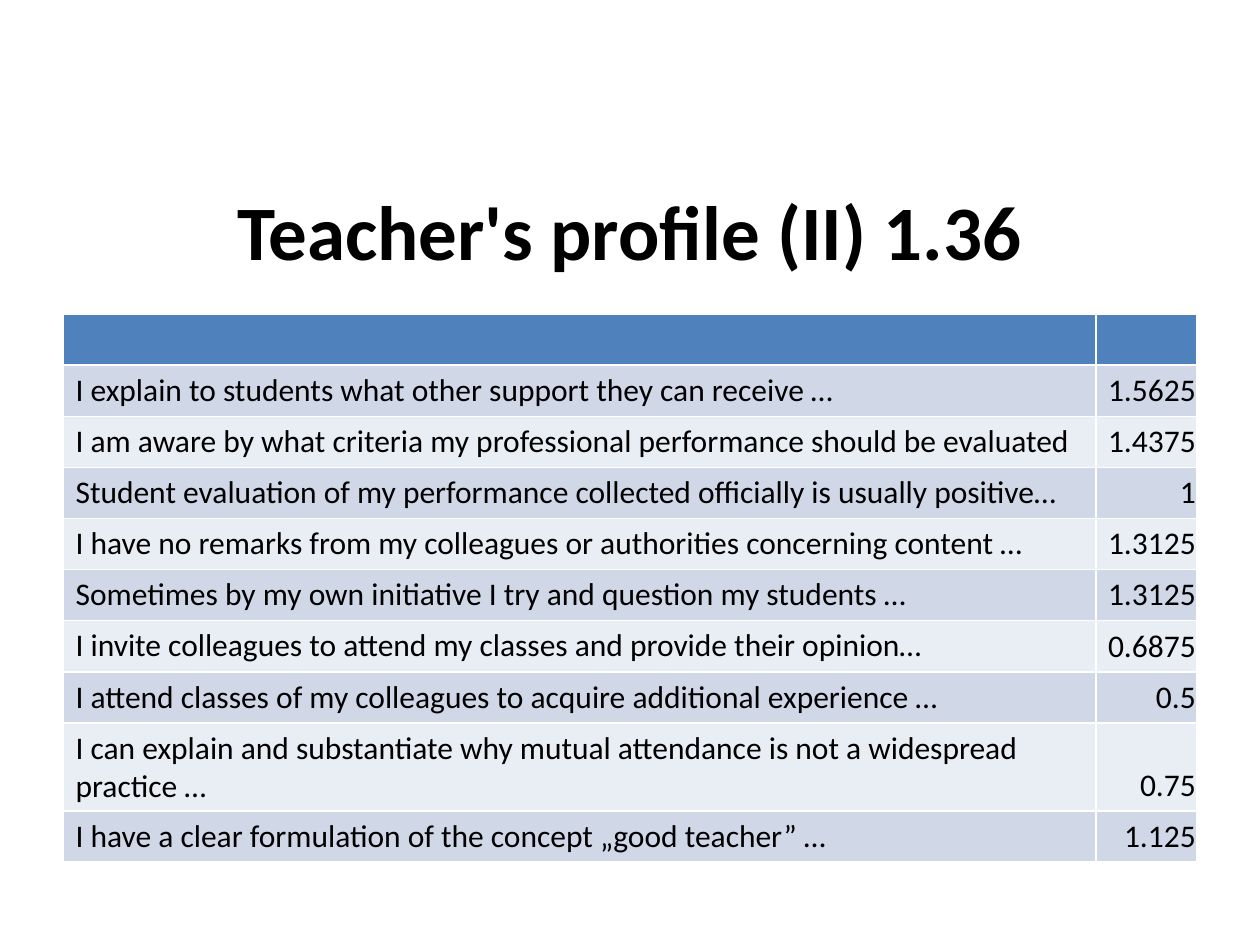
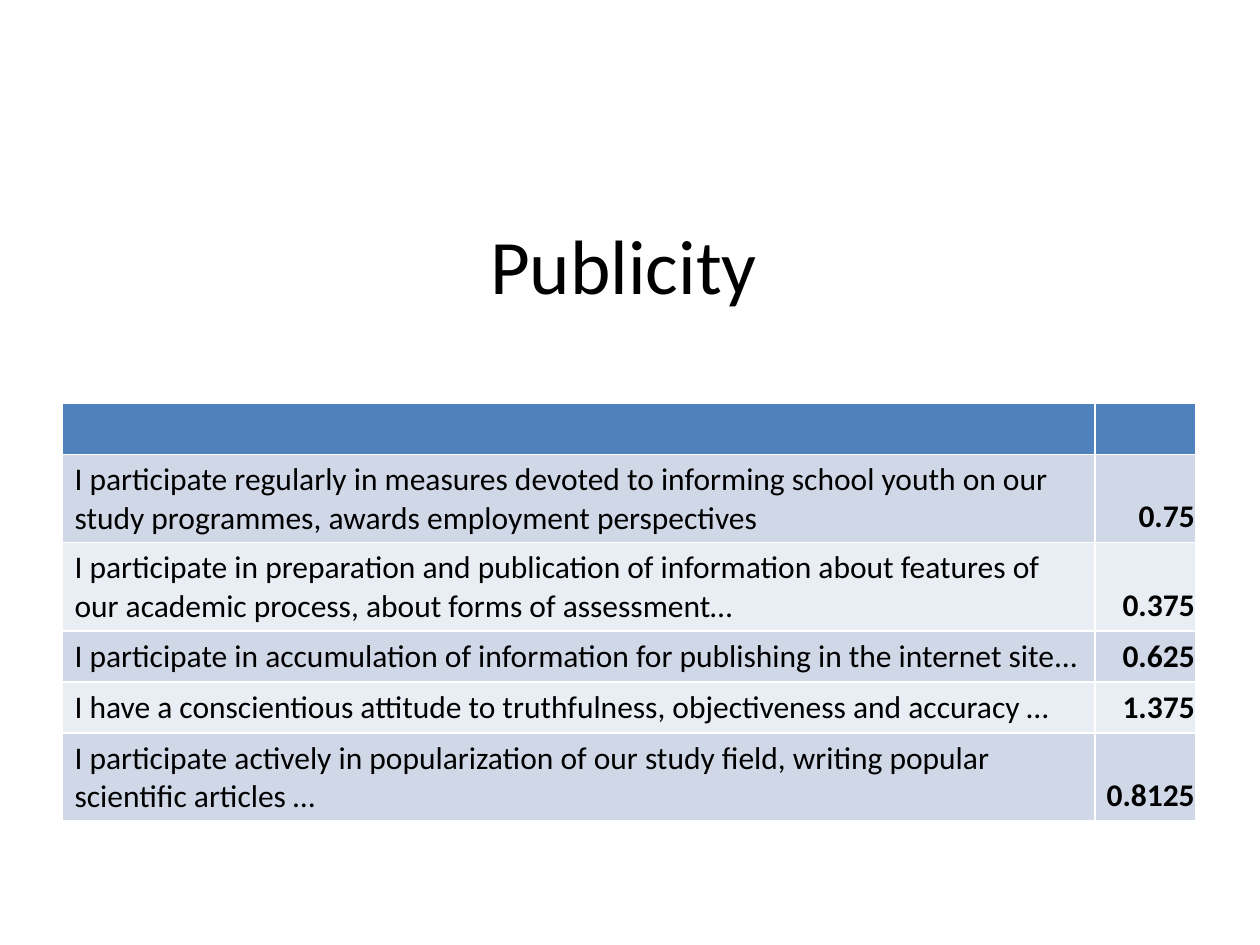
from dataclasses import dataclass

from lxml import etree
from pptx import Presentation
from pptx import util as u
from pptx.dml import color
from pptx.enum import text
from pptx.oxml import ns


@dataclass(frozen=True)
class Theme:
    font: str = "Calibri"
    ink: str = "000000"
    header: str = "4F81BD"
    bands: tuple = ("D0D8E8", "E9EDF4")
    rule: str = "FFFFFF"
    rule_width: float = 1
    title_size: float = 44
    cell_size: float = 18


THEME = Theme()
COLUMN_WIDTHS = (590.4, 57.6)
ROW_HEIGHT = 29.2

PROFILE_SCORES = [
    ("I explain to students what other support they can receive …", "1.5625"),
    ("I am aware by what criteria my professional performance should be evaluated", "1.4375"),
    ("Student evaluation of my performance collected officially is usually positive…", "1"),
    ("I have no remarks from my colleagues or authorities concerning content …", "1.3125"),
    ("Sometimes by my own initiative I try and question my students …", "1.3125"),
    ("I invite colleagues to attend my classes and provide their opinion…", "0.6875"),
    ("I attend classes of my colleagues to acquire additional experience …", "0.5"),
    ("I can explain and substantiate why mutual attendance is not a widespread practice …", "0.75"),
    ("I have a clear formulation of the concept „good teacher” …", "1.125"),
]

PUBLICITY_SCORES = [
    ("I participate regularly in measures devoted to informing school youth on our "
     "study programmes, awards employment perspectives", "0.75"),
    ("I participate in preparation and publication of information about features of "
     "our academic process, about forms of assessment…", "0.375"),
    ("I participate in accumulation of information for publishing in the internet site...", "0.625"),
    ("I have a conscientious attitude to truthfulness, objectiveness and accuracy …", "1.375"),
    ("I participate actively in popularization of our study field, writing popular "
     "scientific articles …", "0.8125"),
]


def format_text(frame, size, align, bold=False):
    para = frame.paragraphs[0]
    para.alignment = align
    for span in para.runs:
        span.font.name = THEME.font
        span.font.size = u.Pt(size)
        span.font.bold = bold
        span.font.color.rgb = color.RGBColor.from_string(THEME.ink)


def add_title(page, title, left, top, width, height, bold):
    box = page.shapes.add_textbox(u.Pt(left), u.Pt(top), u.Pt(width), u.Pt(height))
    frame = box.text_frame
    frame.word_wrap = True
    frame.vertical_anchor = text.MSO_ANCHOR.MIDDLE
    frame.text = title
    format_text(frame, THEME.title_size, text.PP_ALIGN.CENTER, bold)


def paint_cell(cell, fill):
    properties = cell._tc.get_or_add_tcPr()
    for side in ("lnL", "lnR", "lnT", "lnB"):
        line = etree.SubElement(properties, ns.qn(f"a:{side}"), w=str(u.Pt(THEME.rule_width)))
        solid = etree.SubElement(line, ns.qn("a:solidFill"))
        etree.SubElement(solid, ns.qn("a:srgbClr"), val=THEME.rule)
    cell.fill.solid()
    cell.fill.fore_color.rgb = color.RGBColor.from_string(fill)


def write_statement(cell, statement):
    cell.text_frame.text = statement
    format_text(cell.text_frame, THEME.cell_size, text.PP_ALIGN.LEFT)


def write_score(cell, score, bold):
    cell.text_frame.text = score
    cell.vertical_anchor = text.MSO_ANCHOR.BOTTOM
    cell.margin_left = cell.margin_top = cell.margin_right = u.Pt(0.7)
    cell.margin_bottom = u.Pt(3.6)
    format_text(cell.text_frame, THEME.cell_size, text.PP_ALIGN.RIGHT, bold)


def add_score_table(page, scores, left, top, bold_scores):
    row_count = len(scores) + 1
    table = page.shapes.add_table(
        row_count, len(COLUMN_WIDTHS), u.Pt(left), u.Pt(top),
        u.Pt(sum(COLUMN_WIDTHS)), u.Pt(ROW_HEIGHT * row_count)).table
    table.horz_banding = False
    for column, width in zip(table.columns, COLUMN_WIDTHS):
        column.width = u.Pt(width)
    for index, row in enumerate(table.rows):
        row.height = u.Pt(ROW_HEIGHT)
        fill = THEME.bands[(index - 1) % 2] if index else THEME.header
        for cell in row.cells:
            paint_cell(cell, fill)
    for index, (statement, score) in enumerate(scores, start=1):
        write_statement(table.cell(index, 0), statement)
        write_score(table.cell(index, 1), score, bold_scores)


def main():
    deck = Presentation()
    deck.slide_width, deck.slide_height = u.Pt(720), u.Pt(540)
    blank = deck.slide_layouts[6]

    profile = deck.slides.add_slide(blank)
    add_title(profile, "Teacher's profile (II) 1.36", 36, 94.3, 648, 74.2, bold=True)
    add_score_table(profile, PROFILE_SCORES, 36, 179.5, bold_scores=False)

    publicity = deck.slides.add_slide(blank)
    add_title(publicity, "Publicity", 32.4, 105.8, 648, 90, bold=False)
    add_score_table(publicity, PUBLICITY_SCORES, 35.4, 230.4, bold_scores=True)

    deck.save("out.pptx")


if __name__ == "__main__":
    main()
